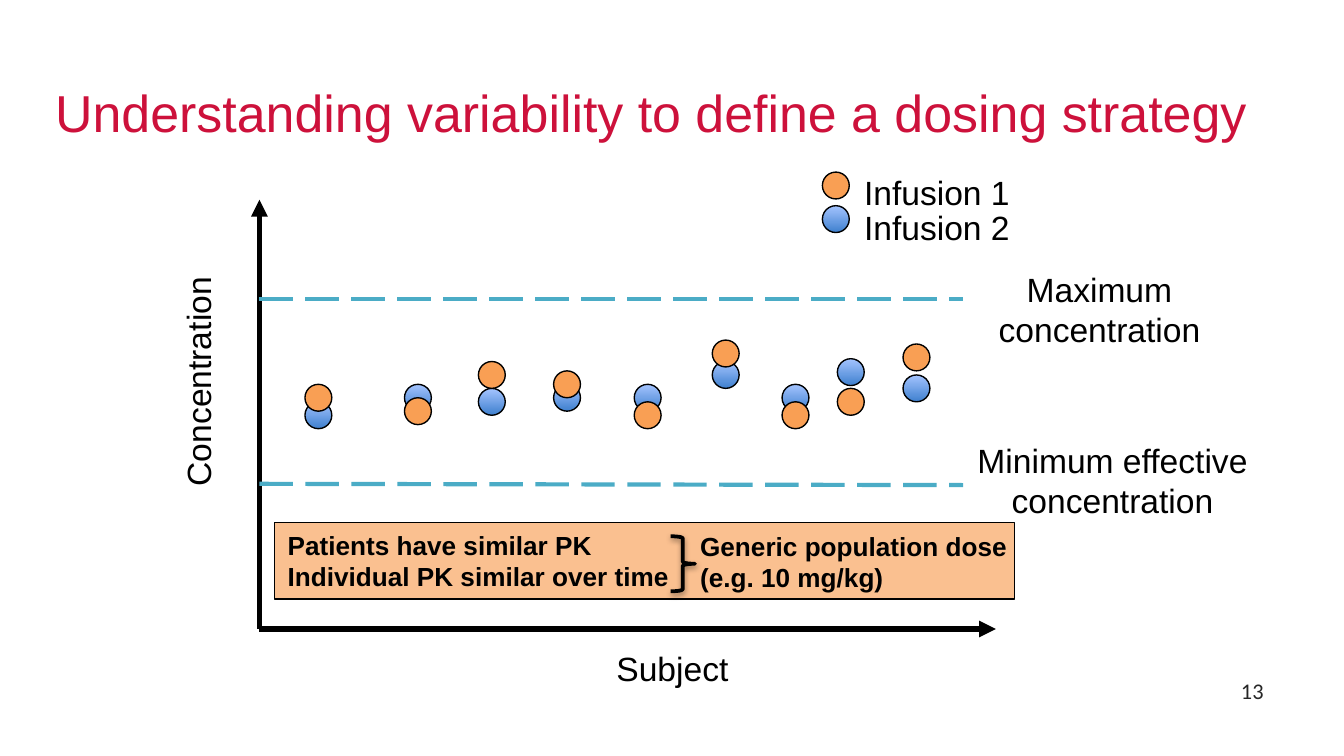
from dataclasses import dataclass

from lxml import etree
from pptx import Presentation
from pptx.dml.color import RGBColor
from pptx.enum.dml import MSO_LINE
from pptx.enum.shapes import MSO_CONNECTOR, MSO_SHAPE
from pptx.enum.text import MSO_ANCHOR, PP_ALIGN
from pptx.oxml.ns import qn
from pptx.shapes.autoshape import Shape
from pptx.shapes.connector import Connector
from pptx.shapes.shapetree import GroupShapes, SlideShapes
from pptx.text.text import TextFrame
from pptx.util import Pt

STRAIGHT = MSO_CONNECTOR.STRAIGHT
OVAL, RECTANGLE, BRACE = MSO_SHAPE.OVAL, MSO_SHAPE.RECTANGLE, MSO_SHAPE.RIGHT_BRACE
LONG_DASH = MSO_LINE.LONG_DASH
TOP, MIDDLE = MSO_ANCHOR.TOP, MSO_ANCHOR.MIDDLE
LEFT, CENTER, RIGHT = PP_ALIGN.LEFT, PP_ALIGN.CENTER, PP_ALIGN.RIGHT

BLACK = RGBColor(0x00, 0x00, 0x00)
CRIMSON = RGBColor(0xCD, 0x11, 0x3B)
CHARCOAL = RGBColor(0x26, 0x26, 0x26)
TEAL = RGBColor(0x4B, 0xAC, 0xC6)
ORANGE = RGBColor(0xF9, 0x9F, 0x54)
PEACH = RGBColor(0xFA, 0xC0, 0x90)
DARK_BLUE = RGBColor(0x3F, 0x80, 0xCE)
LIGHT_BLUE = RGBColor(0xA4, 0xC4, 0xFF)

DOT_SIZE = 14.4
ORIGIN_X, ORIGIN_Y = 139, 337
LIMIT_END = 516


@dataclass
class Label:
    text: str
    left: float
    top: float
    width: float
    height: float
    align: PP_ALIGN = CENTER
    size: float = 18
    bold: bool = False
    font: str = "Arial"
    color: RGBColor = BLACK
    anchor: MSO_ANCHOR = TOP
    rotation: float = 0


@dataclass
class Subject:
    left: float
    first_infusion: float
    second_infusion: float


@dataclass
class Segment:
    start_x: float
    start_y: float
    end_x: float
    end_y: float


LABELS = [
    Label("13", 516, 359, 168, 22, RIGHT, 12, font="Calibri", color=CHARCOAL, anchor=MIDDLE),
    Label("Concentration", 37.5, 190, 137, 29, rotation=270),
    Label("Subject", 309.5, 343.5, 101.5, 29),
    Label("Minimum effective concentration", 515.5, 232, 161, 51),
    Label("Maximum concentration", 516, 140.4, 146, 51),
]
CONCLUSION = Label("Patients have similar PK\nIndividual PK similar over time",
                   147, 280, 396.5, 41, LEFT, 14, True)
DOSE = Label("Generic population dose\n(e.g. 10 mg/kg)", 368, 280.4, 222, 41, LEFT, 14, True)

SUBJECTS = [
    Subject(163.4, 205.9, 215.3),
    Subject(216.7, 213.1, 205.9),
    Subject(256.3, 193.7, 208.1),
    Subject(296.6, 198.7, 205.9),
    Subject(339.8, 215.3, 205.9),
    Subject(381.6, 182.2, 193.7),
    Subject(419, 215.3, 205.9),
    Subject(448.6, 208.1, 192.2),
    Subject(483.8, 184.3, 200.9),
]
AXES = [Segment(ORIGIN_X, 107, ORIGIN_X, ORIGIN_Y), Segment(533.5, ORIGIN_Y, ORIGIN_X, ORIGIN_Y)]
LIMITS = [Segment(ORIGIN_X, 160, LIMIT_END, 160), Segment(ORIGIN_X, 259.2, LIMIT_END, 259.9)]


def write_text(frame: TextFrame, label: Label) -> None:
    frame.text = label.text
    frame.word_wrap = True
    frame.vertical_anchor = label.anchor
    for paragraph in frame.paragraphs:
        paragraph.alignment = label.align
        for span in paragraph.runs:
            span.font.name = label.font
            span.font.size = Pt(label.size)
            span.font.bold = label.bold
            span.font.color.rgb = label.color


def add_label(shapes: SlideShapes | GroupShapes, label: Label) -> None:
    box = shapes.add_textbox(Pt(label.left), Pt(label.top), Pt(label.width), Pt(label.height))
    box.rotation = label.rotation
    write_text(box.text_frame, label)


def add_segment(shapes: SlideShapes, segment: Segment, color: RGBColor, width: float) -> Connector:
    line = shapes.add_connector(STRAIGHT, Pt(segment.start_x), Pt(segment.start_y),
                                Pt(segment.end_x), Pt(segment.end_y))
    line.line.color.rgb = color
    line.line.width = Pt(width)
    etree.SubElement(line._element.spPr, qn("a:effectLst"))
    return line


def add_outlined(shapes: SlideShapes | GroupShapes, kind: MSO_SHAPE, left: float, top: float,
                 width: float, height: float, line_width: float = 0.75) -> Shape:
    shape = shapes.add_shape(kind, Pt(left), Pt(top), Pt(width), Pt(height))
    shape.shadow.inherit = False
    shape.line.color.rgb = BLACK
    shape.line.width = Pt(line_width)
    return shape


def add_dot(shapes: GroupShapes, left: float, top: float, first: bool) -> None:
    dot = add_outlined(shapes, OVAL, left, top, DOT_SIZE, DOT_SIZE)
    if first:
        dot.fill.solid()
        dot.fill.fore_color.rgb = ORANGE
    else:
        dot.fill.gradient()
        dot.fill.gradient_angle = 90
        for stop, color in zip(dot.fill.gradient_stops, (DARK_BLUE, LIGHT_BLUE)):
            stop.color.rgb = color


def add_brace(shapes: SlideShapes) -> None:
    brace = add_outlined(shapes, BRACE, 359.3, 287.3, 13, 29.5, 2)
    brace.fill.background()
    effects = brace._element.spPr.find(qn("a:effectLst"))
    shadow = etree.SubElement(effects, qn("a:outerShdw"), blurRad=str(Pt(3.1)),
                              dist=str(Pt(1.6)), dir="5400000", rotWithShape="0")
    color = etree.SubElement(shadow, qn("a:srgbClr"), val=str(BLACK))
    etree.SubElement(color, qn("a:alpha"), val="38000")


def main() -> None:
    deck = Presentation()
    deck.slide_width, deck.slide_height = Pt(720), Pt(405)
    page = deck.slides.add_slide(deck.slide_layouts[5])
    shapes = page.shapes

    heading = Label("Understanding variability to define a dosing strategy",
                    22.3, 37.4, 675.4, 57, LEFT, 27.8, color=CRIMSON)
    title = shapes.title
    title.left, title.top = Pt(heading.left), Pt(heading.top)
    title.width, title.height = Pt(heading.width), Pt(heading.height)
    write_text(title.text_frame, heading)
    title.text_frame.margin_top = Pt(6)

    for axis in AXES:
        line = add_segment(shapes, axis, BLACK, 3)
        etree.SubElement(line.line._get_or_add_ln(), qn("a:headEnd"), type="triangle")
    for limit in LIMITS:
        add_segment(shapes, limit, TEAL, 2.25).line.dash_style = LONG_DASH
    for label in LABELS:
        add_label(shapes, label)

    dots = shapes.add_group_shape().shapes
    for subject in SUBJECTS:
        add_dot(dots, subject.left, subject.second_infusion, False)
        add_dot(dots, subject.left, subject.first_infusion, True)

    panel = add_outlined(shapes, RECTANGLE, CONCLUSION.left, CONCLUSION.top,
                         CONCLUSION.width, CONCLUSION.height)
    panel.fill.solid()
    panel.fill.fore_color.rgb = PEACH
    write_text(panel.text_frame, CONCLUSION)
    add_brace(shapes)
    add_label(shapes, DOSE)

    legend = shapes.add_group_shape().shapes
    for row, name in enumerate(("Infusion 1", "Infusion 2")):
        add_dot(legend, 440.6, 92.2 + 18 * row, row == 0)
        add_label(legend, Label(name, 455.8, 88.6 + 18.7 * row, 101.5, 29, LEFT))

    deck.save("out.pptx")


if __name__ == "__main__":
    main()
